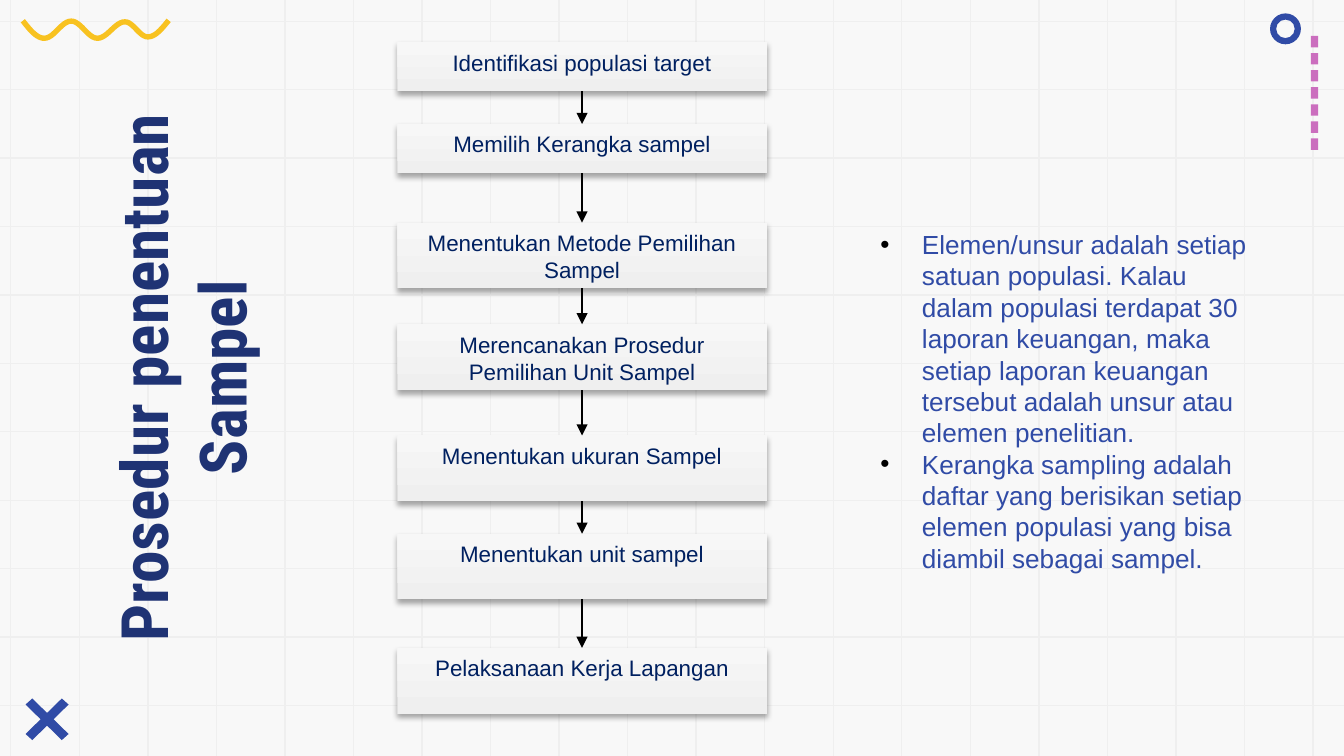
from math import cos, hypot, pi, sin

from lxml.etree import SubElement
from pptx import Presentation
from pptx.dml.color import RGBColor
from pptx.enum.shapes import MSO_CONNECTOR, MSO_SHAPE
from pptx.enum.text import MSO_ANCHOR, PP_ALIGN
from pptx.oxml.ns import qn
from pptx.util import Inches, Pt

TITLE = "Prosedur penentuan Sampel"
STEPS = [
    ("Identifikasi populasi target", 5.6, 6.5),
    ("Memilih Kerangka sampel", 16.4, 6.5),
    ("Menentukan Metode Pemilihan Sampel", 29.45, 8.7),
    ("Merencanakan Prosedur Pemilihan Unit Sampel", 42.9, 8.7),
    ("Menentukan ukuran Sampel", 57.6, 8.7),
    ("Menentukan unit sampel", 70.6, 8.7),
    ("Pelaksanaan Kerja Lapangan", 85.7, 8.7),
]
NOTES = [
    "Elemen/unsur adalah setiap satuan populasi. Kalau dalam populasi terdapat 30 "
    "laporan keuangan, maka setiap laporan keuangan tersebut adalah unsur atau "
    "elemen penelitian.",
    "Kerangka sampling adalah daftar yang berisikan setiap elemen populasi yang bisa "
    "diambil sebagai sampel.",
]
WAVE = [(1.7, 2.76), (3.3, 5.07), (5.3, 2.8), (7.25, 5.07),
        (9.3, 2.9), (11, 4.89), (12.55, 2.7)]
CROSS_BAR = [(2.4, 92.4), (1.9, 93.2), (4.6, 97.9), (5.1, 97.1)]
COLORS = {
    "paper": "F8F8F8", "grid": "EFEFEF", "pink": "CB6EBE", "blue": "304BA6",
    "yellow": "F8C220", "box_low": "EFEFEF", "box_high": "F7F7F7",
    "step": "002060", "title": "1F3374", "black": "000000",
}
WIDTH, HEIGHT = Pt(720), Pt(405)

deck = Presentation()
deck.slide_width, deck.slide_height = WIDTH, HEIGHT
page = deck.slides.add_slide(deck.slide_layouts[6])
page.background.fill.solid()


def color(name):
    return RGBColor.from_string(COLORS[name])


def across(share):
    return round(WIDTH * share / 100)


def down(share):
    return round(HEIGHT * share / 100)


def area(left, top, width, height):
    return across(left), down(top), across(width), down(height)


def write(shape, texts, size, ink, font="Arial", bold=False,
          align=PP_ALIGN.LEFT, inset=0.05, bullet=None):
    frame = shape.text_frame
    frame.word_wrap = True
    frame.vertical_anchor = MSO_ANCHOR.TOP
    frame.margin_left = frame.margin_right = Inches(0.1)
    frame.margin_top = frame.margin_bottom = Inches(inset)
    for index, text in enumerate(texts):
        para = frame.paragraphs[0] if index == 0 else frame.add_paragraph()
        para.alignment = align
        span = para.add_run()
        span.text = text
        span.font.name, span.font.size = font, Pt(size)
        span.font.bold, span.font.color.rgb = bold, color(ink)
        if bullet:
            props = para._p.get_or_add_pPr()
            props.set("marL", str(Inches(0.31)))
            props.set("indent", str(-Inches(0.31)))
            tint = SubElement(props, qn("a:buClr"))
            SubElement(tint, qn("a:srgbClr"), val=COLORS["black"])
            SubElement(props, qn("a:buFont"), typeface="Arial")
            SubElement(props, qn("a:buChar"), char=bullet)


def paint(shape, name):
    shape.shadow.inherit = False
    shape.fill.solid()
    shape.fill.fore_color.rgb = color(name)
    shape.line.fill.background()
    return shape


def polygon(points, name):
    builder = page.shapes.build_freeform(*points[0], scale=1.0)
    builder.add_line_segments(points[1:], close=True)
    return paint(builder.convert_to_shape(), name)


def connect(start, end, name):
    line = page.shapes.add_connector(MSO_CONNECTOR.STRAIGHT, *start, *end)
    line.line.color.rgb = color(name)
    line.line.width = Pt(0.75)
    SubElement(line._element.spPr, qn("a:effectLst"))
    return line


def wave_outline(knots, half):
    steps = 12
    last = len(knots) - 2
    middle = [(across(knots[0][0]), down(knots[0][1]))]
    for index, ((x1, y1), (x2, y2)) in enumerate(zip(knots, knots[1:])):
        for step in range(1, steps + 1):
            t = step / steps
            ease = (1 - cos(pi * t)) / 2
            if index == 0:
                ease = sin(pi * t / 2)
            elif index == last:
                ease = 1 - cos(pi * t / 2)
            middle.append((across(x1 + (x2 - x1) * t), down(y1 + (y2 - y1) * ease)))
    upper, lower = [], []
    for index, (x, y) in enumerate(middle):
        before = middle[max(index - 1, 0)]
        after = middle[min(index + 1, len(middle) - 1)]
        run, rise = after[0] - before[0], after[1] - before[1]
        length = hypot(run, rise)
        shift_x, shift_y = rise / length * half, run / length * half
        upper.append((round(x + shift_x), round(y - shift_y)))
        lower.append((round(x - shift_x), round(y + shift_y)))
    return upper + lower[::-1]


def step_box(text, top, height):
    box = page.shapes.add_shape(MSO_SHAPE.RECTANGLE, *area(29.56, top, 27.5, height))
    box.shadow.inherit = False
    box.line.fill.background()
    box.fill.gradient()
    box.fill.gradient_angle = 90
    for stop, name in zip(box.fill.gradient_stops, ("box_low", "box_high")):
        stop.color.rgb = color(name)
    effects = box._element.spPr.find(qn("a:effectLst"))
    shadow = SubElement(effects, qn("a:outerShdw"), blurRad=str(Pt(3.1)),
                        dist=str(Pt(1.8)), dir="5400000", rotWithShape="0")
    tint = SubElement(shadow, qn("a:srgbClr"), val=COLORS["black"])
    SubElement(tint, qn("a:alpha"), val="35000")
    write(box, [text], 12, "step", align=PP_ALIGN.CENTER)
    return box


page.background.fill.fore_color.rgb = color("paper")
for row in range(11):
    y = down(2.82 + 9.05 * row)
    connect((WIDTH, y), (0, y), "grid")
for column in range(20):
    x = across(0.8 + 5.1 * column)
    connect((x, down(-3.2)), (x, down(103.2)), "grid")

for dash in range(7):
    place = area(97.53, 4.76 + 2.26 * dash, 0.55, 1.51)
    paint(page.shapes.add_shape(MSO_SHAPE.RECTANGLE, *place), "pink")
for bar in (CROSS_BAR, [(7 - x, y) for x, y in CROSS_BAR]):
    polygon([(across(x), down(y)) for x, y in bar], "blue")
polygon(wave_outline(WAVE, Inches(0.02)), "yellow")
ring = paint(page.shapes.add_shape(MSO_SHAPE.DONUT, *area(94.5, 1.78, 2.3, 4.09)), "blue")
ring.adjustments[0] = 0.2

boxes = [step_box(*step) for step in STEPS]
for upper, lower in zip(boxes, boxes[1:]):
    arrow = connect((0, 0), (0, 0), "black")
    arrow.begin_connect(upper, 2)
    arrow.end_connect(lower, 0)
    SubElement(arrow.line._get_or_add_ln(), qn("a:tailEnd"), type="triangle")

heading = page.shapes.add_textbox(*area(-9.05, 36.8, 46.2, 26.3))
heading.rotation = 270
write(heading, [TITLE], 35, "title", font="Roboto Condensed", bold=True,
      align=PP_ALIGN.CENTER, inset=0.1)
write(page.shapes.add_textbox(*area(64.52, 29.35, 30.6, 47.8)), NOTES, 14, "blue", bullet="•")

deck.save("out.pptx")
